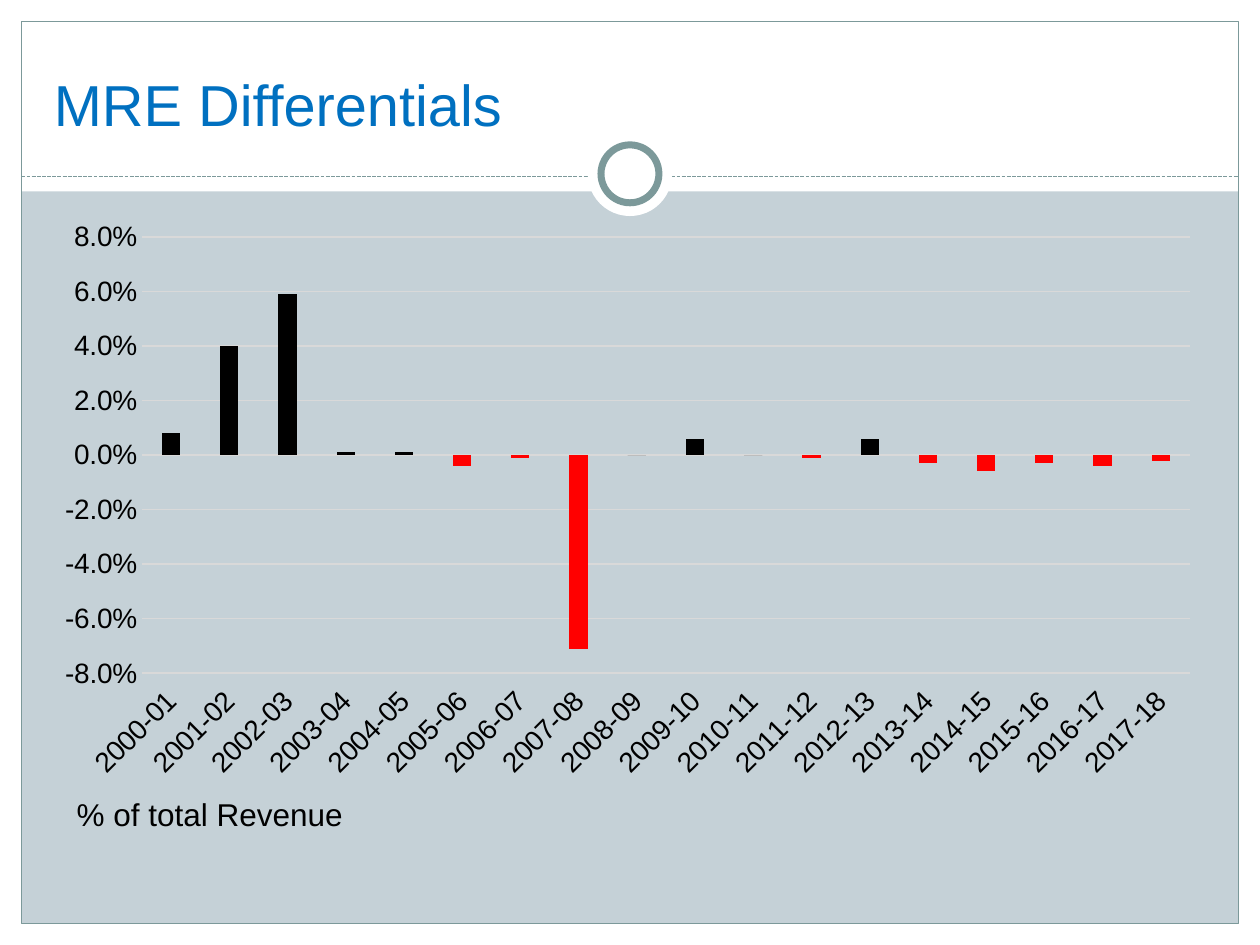
import dataclasses

import pptx
import pptx.chart.data
import pptx.dml.color
import pptx.enum.chart
import pptx.enum.dml
import pptx.enum.shapes
import pptx.enum.text
import pptx.oxml.ns
import pptx.oxml.xmlchemy
import pptx.util
from pptx.util import Inches

Color = pptx.dml.color.RGBColor.from_string
Shapes = pptx.enum.shapes.MSO_SHAPE


@dataclasses.dataclass(frozen=True)
class Theme:
    font: str = "Arial"
    background: str = "C5D1D7"
    white: str = "FFFFFF"
    frame: str = "7C999A"
    title: str = "0070C0"
    text: str = "000000"
    positive: str = "000000"
    negative: str = "FF0000"
    grid: str = "D9D9D9"
    title_size: int = 33
    note_size: int = 18
    chart_size: int = 16
    thin: float = 0.75
    ring: float = 4


THEME = Theme()
WIDTH, HEIGHT = 10, 7.5
MARGIN = 0.17
HEADER_HEIGHT = 1.52

FIRST_YEAR = 2000
DIFFERENTIALS = [0.008, 0.04, 0.059, 0.001, 0.001, -0.004, -0.001, -0.071, 0,
                 0.006, 0, -0.001, 0.006, -0.003, -0.006, -0.003, -0.004, -0.002]


def style_font(font, size, color):
    font.name = THEME.font
    font.size = pptx.util.Pt(size)
    font.color.rgb = Color(color)


def style_line(line, color, width):
    line.color.rgb = Color(color)
    line.width = pptx.util.Pt(width)


def add_plain_shape(slide, kind, box, fill=None, line=None, line_width=THEME.thin):
    shape = slide.shapes.add_shape(kind, *map(Inches, box))
    shape.shadow.inherit = False
    if fill:
        shape.fill.solid()
        shape.fill.fore_color.rgb = Color(fill)
    else:
        shape.fill.background()
    if line:
        style_line(shape.line, line, line_width)
    else:
        shape.line.fill.background()
    return shape


def add_text(slide, box, text, size, color, wrap):
    text_box = slide.shapes.add_textbox(*map(Inches, box))
    text_frame = text_box.text_frame
    text_frame.word_wrap = wrap
    text_frame.text = text
    style_font(text_frame.paragraphs[0].runs[0].font, size, color)
    return text_frame


def add_frame(slide, width, height):
    # White bands around the page
    bands = [
        (0, height - MARGIN, width, MARGIN),
        (0, 0, width, HEADER_HEIGHT),
        (0, 0, MARGIN, height),
        (width - MARGIN, 0, MARGIN, height),
    ]
    for band in bands:
        add_plain_shape(slide, Shapes.RECTANGLE, band, fill=THEME.white)
    border = (MARGIN, MARGIN, width - 2 * MARGIN, height - 2 * MARGIN)
    add_plain_shape(slide, Shapes.RECTANGLE, border, line=THEME.frame)

    # Dashed rule under the title
    rule = slide.shapes.add_connector(
        pptx.enum.shapes.MSO_CONNECTOR.STRAIGHT,
        Inches(MARGIN), Inches(1.4), Inches(width - MARGIN), Inches(1.4))
    style_line(rule.line, THEME.frame, THEME.thin)
    rule.line.dash_style = pptx.enum.dml.MSO_LINE.SQUARE_DOT
    rule._element.spPr.append(pptx.oxml.xmlchemy.OxmlElement("a:effectLst"))

    # Ring centred on the rule
    for diameter, line in ((0.67, None), (0.46, THEME.frame)):
        box = (width / 2 - diameter / 2, 1.38 - diameter / 2, diameter, diameter)
        add_plain_shape(slide, Shapes.OVAL, box, THEME.white, line, THEME.ring)


def add_title(slide, box):
    text_frame = add_text(slide, box, "MRE Differentials",
                          THEME.title_size, THEME.title, wrap=True)
    text_frame.vertical_anchor = pptx.enum.text.MSO_ANCHOR.MIDDLE


def style_axes(chart):
    no_tick = pptx.enum.chart.XL_TICK_MARK.NONE
    for axis in (chart.category_axis, chart.value_axis):
        axis.major_tick_mark = axis.minor_tick_mark = no_tick
        style_font(axis.tick_labels.font, THEME.chart_size, THEME.text)

    years = chart.category_axis
    years.tick_label_position = pptx.enum.chart.XL_TICK_LABEL_POSITION.LOW
    style_line(years.format.line, THEME.grid, THEME.thin)
    body = years._element.find(".//" + pptx.oxml.ns.qn("a:bodyPr"))
    body.set("rot", str(-45 * 60000))
    body.set("vert", "horz")

    shares = chart.value_axis
    shares.minimum_scale, shares.maximum_scale = -0.08, 0.08
    shares.major_unit = 0.02
    shares.tick_labels.number_format = "0.0%"
    shares.tick_labels.number_format_is_linked = False
    shares.format.line.fill.background()
    style_line(shares.major_gridlines.format.line, THEME.grid, THEME.thin)


def add_differentials_chart(slide, box):
    data = pptx.chart.data.CategoryChartData(number_format="0.0%")
    data.categories = [f"{year}-{(year + 1) % 100:02d}" for year in
                       range(FIRST_YEAR, FIRST_YEAR + len(DIFFERENTIALS))]
    data.add_series("Series 1", DIFFERENTIALS)
    chart = slide.shapes.add_chart(
        pptx.enum.chart.XL_CHART_TYPE.COLUMN_CLUSTERED,
        *map(Inches, box), data).chart
    chart.has_legend = False
    chart.has_title = False
    style_font(chart.font, THEME.chart_size, THEME.text)
    style_axes(chart)

    # Columns: deficits stand out in red
    plot = chart.plots[0]
    plot.vary_by_categories = False
    plot.gap_width, plot.overlap = 219, -27
    series = plot.series[0]
    series.invert_if_negative = False
    series.format.fill.solid()
    series.format.fill.fore_color.rgb = Color(THEME.positive)
    for index, value in enumerate(DIFFERENTIALS):
        if value < 0:
            fill = series.points[index].format.fill
            fill.solid()
            fill.fore_color.rgb = Color(THEME.negative)


def add_note(slide, box):
    text_frame = add_text(slide, box, "% of total Revenue",
                          THEME.note_size, THEME.text, wrap=False)
    text_frame.auto_size = pptx.enum.text.MSO_AUTO_SIZE.SHAPE_TO_FIT_TEXT


def main():
    presentation = pptx.Presentation()
    presentation.slide_width = Inches(WIDTH)
    presentation.slide_height = Inches(HEIGHT)
    slide = presentation.slides.add_slide(presentation.slide_layouts[6])
    slide.background.fill.solid()
    slide.background.fill.fore_color.rgb = Color(THEME.background)

    add_frame(slide, WIDTH, HEIGHT)
    add_title(slide, (0.33, 0.41, 9.33, 0.83))
    add_differentials_chart(slide, (0.33, 1.67, 9.3, 4.6))
    add_note(slide, (0.51, 6.26, 2.33, 0.4))
    presentation.save("out.pptx")


if __name__ == "__main__":
    main()
